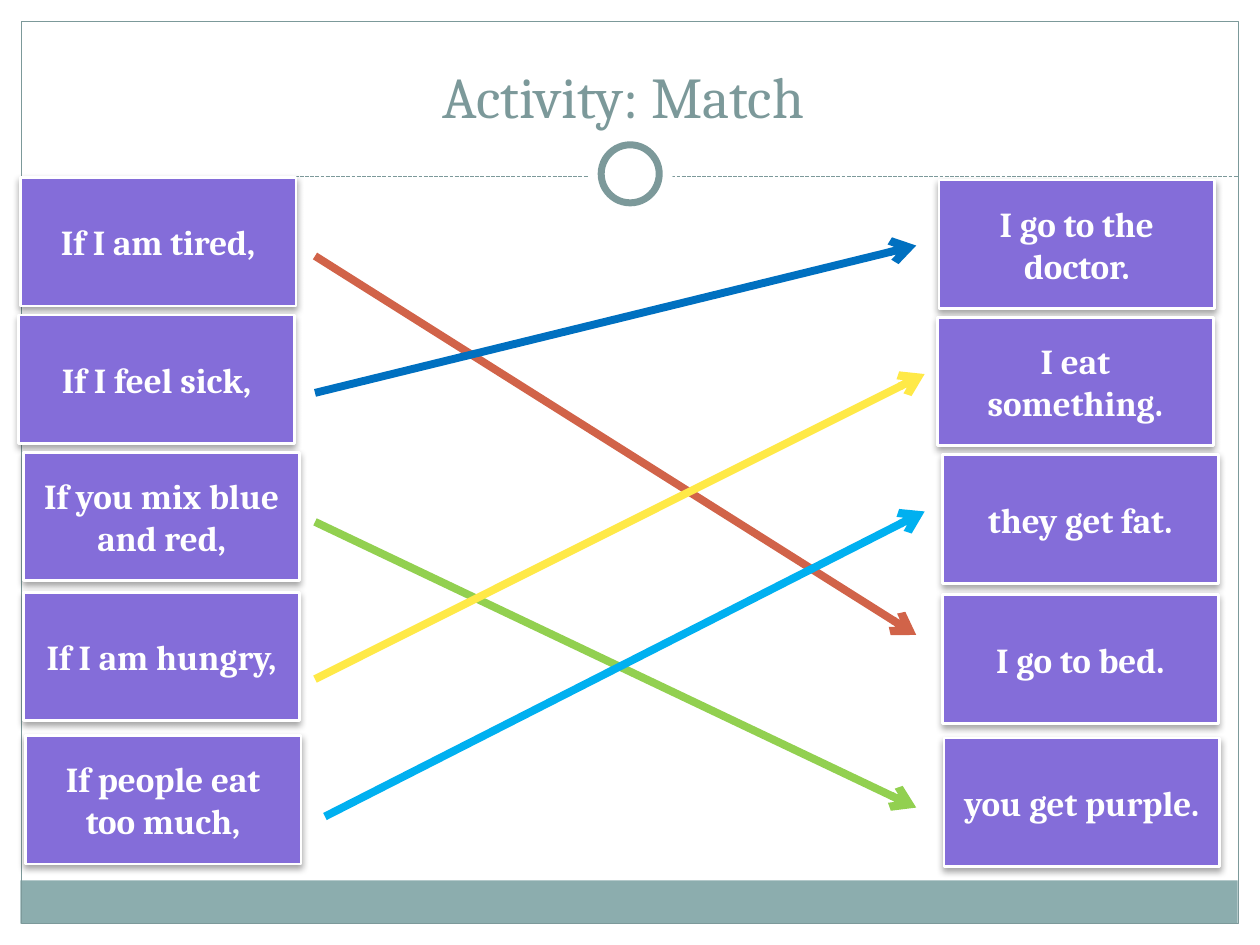
"""Build a matching activity: conditional clauses linked by arrows to their endings."""
from lxml import etree
from pptx import Presentation
from pptx.dml.color import RGBColor
from pptx.enum.dml import MSO_LINE
from pptx.enum.shapes import MSO_CONNECTOR, MSO_SHAPE
from pptx.enum.text import MSO_ANCHOR, PP_ALIGN
from pptx.oxml.ns import qn
from pptx.util import Cm, Pt

RECTANGLE, OVAL = MSO_SHAPE.RECTANGLE, MSO_SHAPE.OVAL
STRAIGHT, DASH = MSO_CONNECTOR.STRAIGHT, MSO_LINE.SQUARE_DOT
MIDDLE, BOTTOM, CENTER = MSO_ANCHOR.MIDDLE, MSO_ANCHOR.BOTTOM, PP_ALIGN.CENTER

COLORS = {
    "white": "FFFFFF", "black": "000000", "frame": "7C999A", "band": "8CADAE",
    "card": "846DD9", "red": "D16349", "blue": "0070C0", "green": "92D050",
    "yellow": "FFE947", "sky": "00B0F0",
}
TITLE = "Activity: Match "
TITLE_FORMAT = {"name": "Cambria", "size": Pt(33)}
CARD_FORMAT = {"name": "Cambria", "size": Pt(20), "bold": True}
CARD_SIZE = (5.56, 2.59)
ANSWER_OFFSET = (18.52, 0.05)
ROWS = [
    (0.41, 3.58, "If I am tired,", "I go to the doctor."),
    (0.38, 6.35, "If I feel sick,", "I eat something."),
    (0.48, 9.12, "If you mix blue and red,", "they get fat."),
    (0.48, 11.94, "If I am hungry,", "I go to bed."),
    (0.51, 14.83, "If people eat too much,", "you get purple."),
]
DECORATIONS = [
    (RECTANGLE, (0.41, 17.75, 24.54, 0.87), "band", None, 0),
    (RECTANGLE, (0.43, 0.43, 24.54, 18.19), None, "frame", 0.75),
]
RING = [
    (OVAL, (11.86, 2.67, 1.7, 1.7), "white", None, 0),
    (OVAL, (12.12, 2.92, 1.17, 1.17), "white", "frame", 4),
]
DIVIDER = ((0.43, 3.56), (24.97, 3.56))
ARROWS = [
    ((6.35, 5.16), (18.47, 12.8), "red"),
    ((6.35, 7.92), (18.47, 4.95), "blue"),
    ((6.35, 10.52), (18.47, 16.28), "green"),
    ((6.35, 13.69), (18.64, 7.54), "yellow"),
    ((6.55, 16.46), (18.64, 10.31), "sky"),
]


def color(name):
    return RGBColor.from_string(COLORS[name])


def add_box(slide, kind, place, fill, line, width):
    shape = slide.shapes.add_shape(kind, *map(Cm, place))
    shape.shadow.inherit = False
    for target, name in ((shape.fill, fill), (shape.line.fill, line)):
        if name:
            target.solid()
            target.fore_color.rgb = color(name)
        else:
            target.background()
    if line:
        shape.line.width = Pt(width)
    return shape


def write(shape, text, formats, color_name, anchor):
    frame = shape.text_frame
    frame.word_wrap = True
    frame.vertical_anchor = anchor
    paragraph = frame.paragraphs[0]
    paragraph.alignment = CENTER
    run = paragraph.add_run()
    run.text = text
    for attribute, value in formats.items():
        setattr(run.font, attribute, value)
    run.font.color.rgb = color(color_name)


def add_card(slide, left, top, text):
    shape = add_box(slide, RECTANGLE, (left, top, *CARD_SIZE), "card", "white", 1.57)
    effects = shape.element.spPr.find(qn("a:effectLst"))
    shadow = etree.SubElement(effects, qn("a:outerShdw"), blurRad=str(Pt(4)),
                              dist=str(Pt(2)), dir="5400000", rotWithShape="0")
    tint = etree.SubElement(shadow, qn("a:srgbClr"), val=COLORS["black"])
    etree.SubElement(tint, qn("a:alpha"), val="35000")
    write(shape, text, CARD_FORMAT, "white", MIDDLE)


def add_line(slide, start, end, color_name, width):
    connector = slide.shapes.add_connector(STRAIGHT, *map(Cm, (*start, *end)))
    connector.line.color.rgb = color(color_name)
    connector.line.width = Pt(width)
    etree.SubElement(connector.element.spPr, qn("a:effectLst"))
    return connector


def main():
    presentation = Presentation()
    presentation.slide_width, presentation.slide_height = Cm(25.4), Cm(19.05)
    slide = presentation.slides.add_slide(presentation.slide_layouts[6])

    for decoration in DECORATIONS:
        add_box(slide, *decoration)
    add_line(slide, *DIVIDER, "frame", 0.75).line.dash_style = DASH
    for circle in RING:
        add_box(slide, *circle)

    title = slide.shapes.add_textbox(*map(Cm, (0.84, 0.64, 23.7, 2.11)))
    write(title, TITLE, TITLE_FORMAT, "frame", BOTTOM)

    for left, top, clause, _ in ROWS:
        add_card(slide, left, top, clause)
    for left, top, _, answer in ROWS:
        add_card(slide, left + ANSWER_OFFSET[0], top + ANSWER_OFFSET[1], answer)

    for start, end, color_name in ARROWS:
        arrow = add_line(slide, start, end, color_name, 4.5)
        etree.SubElement(arrow.line._get_or_add_ln(), qn("a:tailEnd"), type="arrow")

    presentation.save("out.pptx")


if __name__ == "__main__":
    main()
